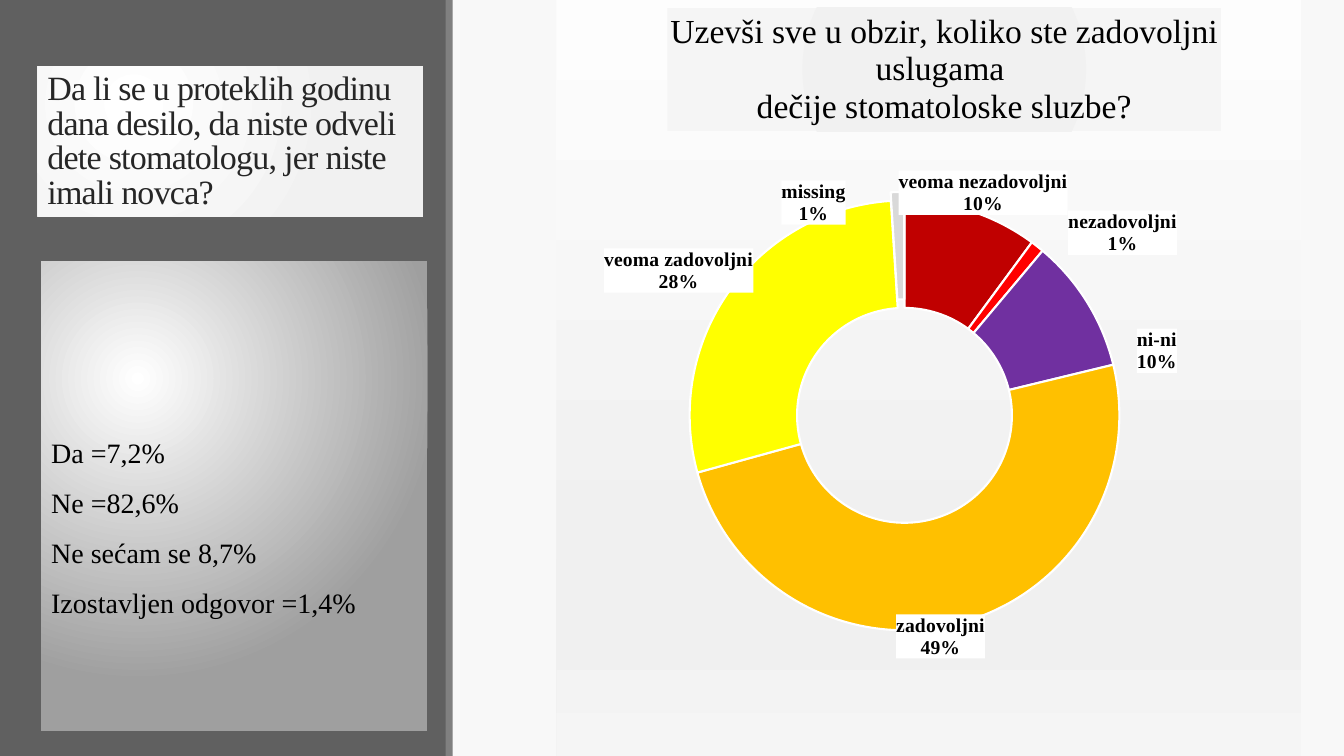
from math import cos, pi, sin

from pptx import Presentation
from pptx import util as u
from pptx.chart.data import CategoryChartData
from pptx.dml.color import RGBColor
from pptx.enum import chart as ch, shapes, text
from pptx.oxml import parse_xml
from pptx.oxml.ns import nsdecls, qn

# Content
FONT = "Times New Roman"
HEAD = ("Da li se u proteklih godinu dana desilo, da niste odveli dete "
        "stomatologu, jer niste imali novca?")
ANSWERS = ["Da =7,2%", "Ne =82,6%", "Ne sećam se 8,7%", "Izostavljen odgovor =1,4%"]
QUESTION = ("Uzevši sve u obzir, koliko ste zadovoljni uslugama \n"
            "dečije stomatoloske sluzbe?")
# Category, value, colour, label centre as share of the chart
SLICES = [
    ("veoma nezadovoljni", 10, "C00000", (0.573, 0.205)),
    ("nezadovoljni", 1, "FF0000", (0.76, 0.267)),
    ("ni-ni", 10, "7030A0", (0.806, 0.436)),
    ("zadovoljni", 49, "FFC000", (0.516, 0.893)),
    ("veoma zadovoljni", 28, "FFFF00", (0.164, 0.327)),
    ("missing", 1, "D9D9D9", (0.346, 0.227)),
]
COL = {"back": "F8F8F8", "side": "606060", "edge": "808080", "head": "262626",
       "ink": "000000", "white": "FFFFFF", "pale": "F1F1F1", "gray": "9F9F9F"}
BARS = [(0, 11.25, "side"), (11.23, 0.18, "edge")]
WIDE, HIGH = 33.87, 19.05
CHART = (14.02, 0, 18.77, HIGH)
PLOT = (0.179, 0.195, 0.577, 0.709)
SPOT = '<a:path path="circle"><a:fillToRect l="{0}" t="{0}" r="{1}" b="{1}"/></a:path>'
CORNER = SPOT.format(50000, 100000)
DOWN = '<a:lin ang="5400000" scaled="0"/>'


def rgb(name):
    return RGBColor.from_string(COL.get(name, name))


def box(dims):
    return [u.Cm(n) for n in dims]


def grad(stops, shade):
    gs = "".join(f'<a:gs pos="{pos * 1000}"><a:srgbClr val="{hue}"/></a:gs>'
                 for pos, hue in stops)
    return parse_xml(f'<a:gradFill {nsdecls("a")} rotWithShape="1">'
                     f'<a:gsLst>{gs}</a:gsLst>{shade}</a:gradFill>')


def style(par, size, hue):
    for run in par.runs:
        run.font.name, run.font.size = FONT, u.Pt(size)
        run.font.color.rgb = rgb(hue)


def place(x, y, w=None, h=None):
    parts = [("xMode", "edge"), ("yMode", "edge")] if w else []
    parts = [("layoutTarget", "inner")] + parts if w else parts
    parts += [("x", x), ("y", y)] + ([("w", w), ("h", h)] if w else [])
    body = "".join(f'<c:{tag} val="{val}"/>' for tag, val in parts)
    return f'<c:layout {nsdecls("c")}><c:manualLayout>{body}</c:manualLayout></c:layout>'


# Slide and side bars
prs = Presentation()
prs.slide_width, prs.slide_height = box((WIDE, HIGH))
slide = prs.slides.add_slide(prs.slide_layouts[5])
slide.background.fill.solid()
slide.background.fill.fore_color.rgb = rgb("back")
for left, width, hue in BARS:
    bar = slide.shapes.add_shape(shapes.MSO_SHAPE.RECTANGLE, *box((left, 0, width, HIGH)))
    bar.shadow.inherit = False
    bar.fill.solid()
    bar.fill.fore_color.rgb = rgb(hue)
    bar.line.fill.background()

# Title, brought in front of the bars
head = slide.shapes.title
slide.shapes._spTree.append(head._element)
head.left, head.top, head.width, head.height = box((0.94, 1.67, 9.73, 3.79))
head._element.spPr.append(grad([(0, COL["white"]), (100, COL["pale"])], CORNER))
frame = head.text_frame
frame.text = HEAD
frame.word_wrap, frame.auto_size = True, text.MSO_AUTO_SIZE.NONE
frame.vertical_anchor = text.MSO_ANCHOR.BOTTOM
par = frame.paragraphs[0]
par.alignment, par.line_spacing = text.PP_ALIGN.LEFT, 0.85
style(par, 24.3, "head")
par.runs[0].font._element.set("spc", "-50")

# Doughnut chart
data = CategoryChartData()
data.categories = [item[0] for item in SLICES]
data.add_series("Series 1", [item[1] for item in SLICES])
chart = slide.shapes.add_chart(ch.XL_CHART_TYPE.DOUGHNUT, *box(CHART), data).chart
chart.has_legend = False
chart.font.name, chart.font.size = "Calibri", u.Pt(10)
chart.font.color.rgb = rgb("ink")
space = chart.element
skin = parse_xml(f'<c:spPr {nsdecls("c", "a")}><a:ln><a:noFill/></a:ln></c:spPr>')
skin.insert(0, grad([(0, "FDFDFD"), (74, "F0F0F0"), (83, "F0F0F0"), (100, "F5F5F5")], DOWN))
space.find(qn("c:chart")).addnext(skin)

# Chart title
chart.has_title = True
title = chart.chart_title
title.text_frame.text = QUESTION
for par in title.text_frame.paragraphs:
    style(par, 24, "ink")
    for run in par.runs:
        run.font.bold = False
title.include_in_layout = False
title.format.fill.background()
fill = title.element.find(qn("c:spPr")).find(qn("a:noFill"))
fill.getparent().replace(fill, grad([(0, COL["pale"]), (100, "F5F5F5")],
                                    SPOT.format(50000, 50000)))
for old in title.element.findall(qn("c:layout")):
    title.element.remove(old)
spot = place(0.149, 0.01).replace("<c:x ", '<c:xMode val="edge"/><c:yMode val="edge"/><c:x ')
title.element.find(qn("c:tx")).addnext(parse_xml(spot))

# Plot area and slices
area = space.find(qn("c:chart")).find(qn("c:plotArea"))
for old in area.findall(qn("c:layout")):
    area.remove(old)
area.insert(0, parse_xml(place(*PLOT)))
plot = chart.plots[0]
plot.vary_by_categories = True
plot._element.find(qn("c:holeSize")).set("val", "44")
ring = plot.series[0]
for i, item in enumerate(SLICES):
    form = ring.points[i].format
    form.fill.solid()
    form.fill.fore_color.rgb = rgb(item[2])
    form.line.color.rgb = rgb("white")
    form.line.width = u.Pt(1.5)
last = ring._element.findall(qn("c:dPt"))[-1]
last.find(qn("c:spPr")).addprevious(parse_xml(f'<c:explosion {nsdecls("c")} val="8"/>'))

# Labels, each shifted from the middle of its ring part
LOOK = (f'<c:spPr><a:solidFill><a:srgbClr val="{COL["white"]}"/></a:solidFill></c:spPr>'
        '<c:txPr><a:bodyPr/><a:p><a:pPr><a:defRPr sz="1400" b="1"><a:solidFill>'
        f'<a:srgbClr val="{COL["ink"]}"/></a:solidFill><a:latin typeface="{FONT}"/>'
        '</a:defRPr></a:pPr><a:endParaRPr lang="sr-Latn-RS"/></a:p></c:txPr>'
        '<c:showLegendKey val="0"/><c:showVal val="0"/><c:showCatName val="1"/>'
        '<c:showSerName val="0"/><c:showPercent val="1"/><c:showBubbleSize val="0"/>'
        '<c:separator>\n</c:separator>')
px, py, pw, ph = PLOT
total, done, tags = sum(item[1] for item in SLICES), 0, ""
for i, (_, val, _, (x, y)) in enumerate(SLICES):
    turn = 2 * pi * (done + val / 2) / total
    done += val
    dx = x - (px + pw / 2 + 0.375 * pw * sin(turn))
    dy = y - (py + ph / 2 - 0.375 * ph * cos(turn))
    tags += f'<c:dLbl><c:idx val="{i}"/>{place(round(dx, 3), round(dy, 3))}{LOOK}</c:dLbl>'
ring._element.find(qn("c:cat")).addprevious(parse_xml(
    f'<c:dLbls {nsdecls("c", "a")}>{tags}{LOOK}<c:showLeaderLines val="0"/></c:dLbls>'))

# Answers
panel = slide.shapes.add_textbox(*box((1.04, 6.58, 9.73, 11.84)))
panel._element.spPr.remove(panel._element.spPr.find(qn("a:noFill")))
panel._element.spPr.append(grad([(0, COL["white"]), (100, COL["gray"])], CORNER))
frame = panel.text_frame
frame.word_wrap, frame.margin_top = True, u.Cm(4.5)
frame.text = "\n".join(ANSWERS)
for i, par in enumerate(frame.paragraphs):
    par.line_spacing, par.space_after = 0.9, u.Pt(2)
    par.space_before = u.Pt(12 if i else 0)
    style(par, 20, "ink")

prs.save("out.pptx")
